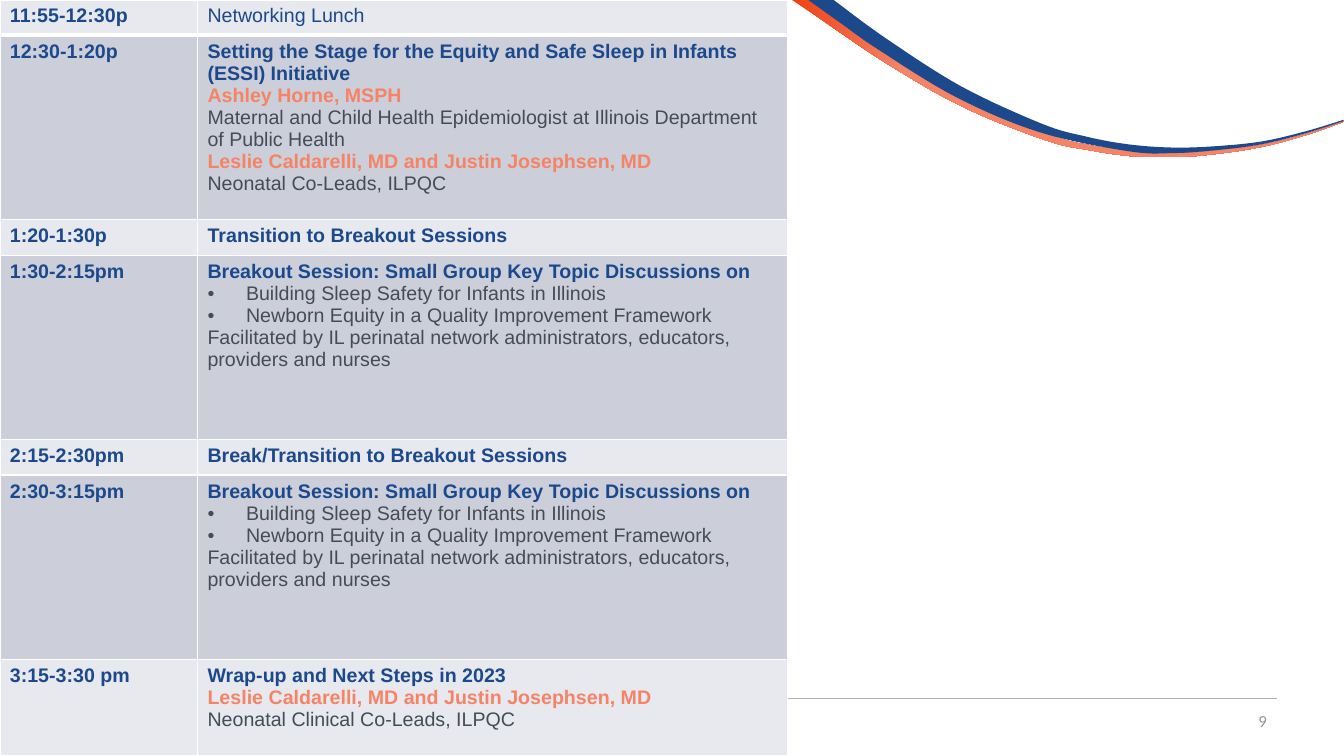
from lxml import etree
from pptx import Presentation
from pptx.dml.color import RGBColor
from pptx.enum.shapes import MSO_CONNECTOR
from pptx.enum.text import MSO_ANCHOR, PP_ALIGN
from pptx.oxml import parse_xml
from pptx.oxml.ns import qn
from pptx.util import Cm, Pt

STRAIGHT = MSO_CONNECTOR.STRAIGHT
MIDDLE = MSO_ANCHOR.MIDDLE
RIGHT = PP_ALIGN.RIGHT
NAMESPACE = "http://schemas.openxmlformats.org/drawingml/2006/main"

NAVY, CORAL, SLATE = "1C498B", "F58366", "444C55"
BAND_FILLS = ["E7E9EE", "CCCFDA"]


def color(hex_string):
    return RGBColor.from_string(hex_string)


def smooth_edge(knots, steps=8):
    """Return lengths along a Catmull-Rom curve through knots given in centimetres."""
    padded = [knots[0], *knots, knots[-1]]
    points = [knots[0]]
    for a, b, c, d in zip(padded, padded[1:], padded[2:], padded[3:]):
        for step in range(1, steps + 1):
            t = step / steps
            points.append(tuple(
                q + t * (r - p) / 2
                + t ** 2 * (2 * p - 5 * q + 4 * r - s) / 2
                + t ** 3 * (3 * q - p - 3 * r + s) / 2
                for p, q, r, s in zip(a, b, c, d)))
    return [(Cm(x), Cm(y)) for x, y in points]


deck = Presentation()
deck.slide_width, deck.slide_height = Cm(33.87), Cm(19.05)
page = deck.slides.add_slide(deck.slide_layouts[6])

# Footer rule
rule = page.shapes.add_connector(STRAIGHT, Cm(1.7), Cm(17.6), Cm(32.18), Cm(17.6))
rule.line.color.rgb = color("AEB3B7")
rule.line.width = Pt(0.75)
etree.SubElement(rule.element.spPr, qn("a:effectLst"))

# Swoosh: upper and lower edge of each ribbon, in centimetres
coral_edges = (
    [(20.45, 0), (22.4, 1.37), (24.33, 2.51), (26.39, 3.38), (27.46, 3.66), (28.58, 3.81),
     (29.67, 3.86), (30.78, 3.78), (31.9, 3.63), (32.99, 3.35), (33.86, 3.05)],
    [(33.86, 3.07), (32.99, 3.38), (31.9, 3.68), (30.81, 3.86), (29.69, 3.96), (28.55, 3.94),
     (27.43, 3.78), (26.34, 3.53), (24.26, 2.69), (22.3, 1.57), (20.42, 0.3), (19.96, 0)],
)
navy_edges = (
    [(21.01, 0), (22.33, 0.97), (24.23, 2.18), (26.26, 3.12), (27.36, 3.44), (28.45, 3.64),
     (29.59, 3.72), (30.71, 3.68), (31.83, 3.56), (32.94, 3.3), (33.86, 3.02)],
    [(33.86, 3.05), (32.94, 3.35), (31.83, 3.63), (30.71, 3.78), (29.57, 3.86), (28.42, 3.81),
     (26.19, 3.33), (24.08, 2.44), (22.12, 1.24), (21.18, 0.58), (20.37, 0)],
)
ribbons = []
for upper, lower in (coral_edges, navy_edges):
    outline = smooth_edge(upper) + smooth_edge(lower)
    builder = page.shapes.build_freeform(*outline[0])
    builder.add_line_segments(outline[1:], close=True)
    ribbon = builder.convert_to_shape()
    ribbon.shadow.inherit = False
    ribbon.line.fill.background()
    ribbons.append(ribbon)

coral_ribbon, navy_ribbon = ribbons
navy_ribbon.fill.solid()
navy_ribbon.fill.fore_color.rgb = color(NAVY)
coral_ribbon.fill.gradient()
coral_ribbon.fill.gradient_angle = 0
for stop, position, shade in zip(coral_ribbon.fill.gradient_stops, (0, 0.2), ("EF4114", CORAL)):
    stop.position = position
    stop.color.rgb = color(shade)

# Slide number
number_box = page.shapes.add_textbox(Cm(24.56), Cm(17.65), Cm(7.62), Cm(1.02))
number_box.text_frame.word_wrap = True
number_box.text_frame.vertical_anchor = MIDDLE
para = number_box.text_frame.paragraphs[0]
para.text = "9"
para.alignment = RIGHT
para.font.name, para.font.size = "Calibri", Pt(12)
para.font.color.rgb = color("919497")

# Agenda: each line is (style, text)
STYLES = {  # style: (colour, bold)
    "title": (NAVY, True),
    "plain title": (NAVY, False),
    "speaker": (CORAL, True),
    "detail": (SLATE, False),
    "bullet": (SLATE, False),
}
leads = ("speaker", "Leslie Caldarelli, MD and Justin Josephsen, MD")
breakout = [
    ("title", "Breakout Session: Small Group Key Topic Discussions on"),
    ("bullet", "Building Sleep Safety for Infants in Illinois"),
    ("bullet", "Newborn Equity in a Quality Improvement Framework"),
    ("detail", "Facilitated by IL perinatal network administrators, educators, providers and nurses"),
]
SHORT, TALL, LAST = 0.89, 4.65, 2.41
agenda = [
    (SHORT, "11:55-12:30p", [("plain title", "Networking Lunch")]),
    (TALL, "12:30-1:20p", [
        ("title", "Setting the Stage for the Equity and Safe Sleep in Infants (ESSI) Initiative"),
        ("speaker", "Ashley Horne, MSPH"),
        ("detail", "Maternal and Child Health Epidemiologist at Illinois Department of Public Health"),
        leads,
        ("detail", "Neonatal Co-Leads, ILPQC"),
    ]),
    (SHORT, "1:20-1:30p", [("title", "Transition to Breakout Sessions")]),
    (TALL, "1:30-2:15pm", breakout),
    (SHORT, "2:15-2:30pm", [("title", "Break/Transition to Breakout Sessions")]),
    (TALL, "2:30-3:15pm", breakout),
    (LAST, "3:15-3:30 pm", [
        ("title", "Wrap-up and Next Steps in 2023"),
        leads,
        ("detail", "Neonatal Clinical Co-Leads, ILPQC"),
    ]),
]

table = page.shapes.add_table(len(agenda), 2, 0, 0, Cm(19.84), Cm(19.03)).table
table.first_row = table.horz_banding = False
table.columns[0].width, table.columns[1].width = Cm(4.98), Cm(14.86)

for row_index, (height, time, session) in enumerate(agenda):
    table.rows[row_index].height = Cm(height)
    for column_index, lines in enumerate(([("title", time)], session)):
        cell = table.cell(row_index, column_index)
        cell.margin_left = cell.margin_right = Cm(0.25)
        cell.margin_top = cell.margin_bottom = Cm(0.13)
        cell.fill.solid()
        cell.fill.fore_color.rgb = color(BAND_FILLS[row_index % 2])

        for order, side in enumerate("LRTB"):
            thick = (row_index, side) in ((0, "B"), (1, "T"))
            border = parse_xml(
                f'<a:ln{side} xmlns:a="{NAMESPACE}" w="{Pt(3 if thick else 1)}">'
                f'<a:solidFill><a:srgbClr val="FFFFFF"/></a:solidFill></a:ln{side}>')
            cell._tc.get_or_add_tcPr().insert(order, border)

        cell.text_frame.text = "\n".join(text for _, text in lines)
        for para, (style, _) in zip(cell.text_frame.paragraphs, lines):
            if style == "bullet":
                properties = para._p.get_or_add_pPr()
                properties.set("marL", str(Cm(0.97)))
                properties.set("indent", str(-Cm(0.97)))
                etree.SubElement(properties, qn("a:buFont"), typeface="Arial")
                etree.SubElement(properties, qn("a:buChar"), char="•")
            shade, bold = STYLES[style]
            para.font.name, para.font.size = "Arial", Pt(14)
            para.font.bold = bold
            para.font.color.rgb = color(shade)

deck.save("out.pptx")
